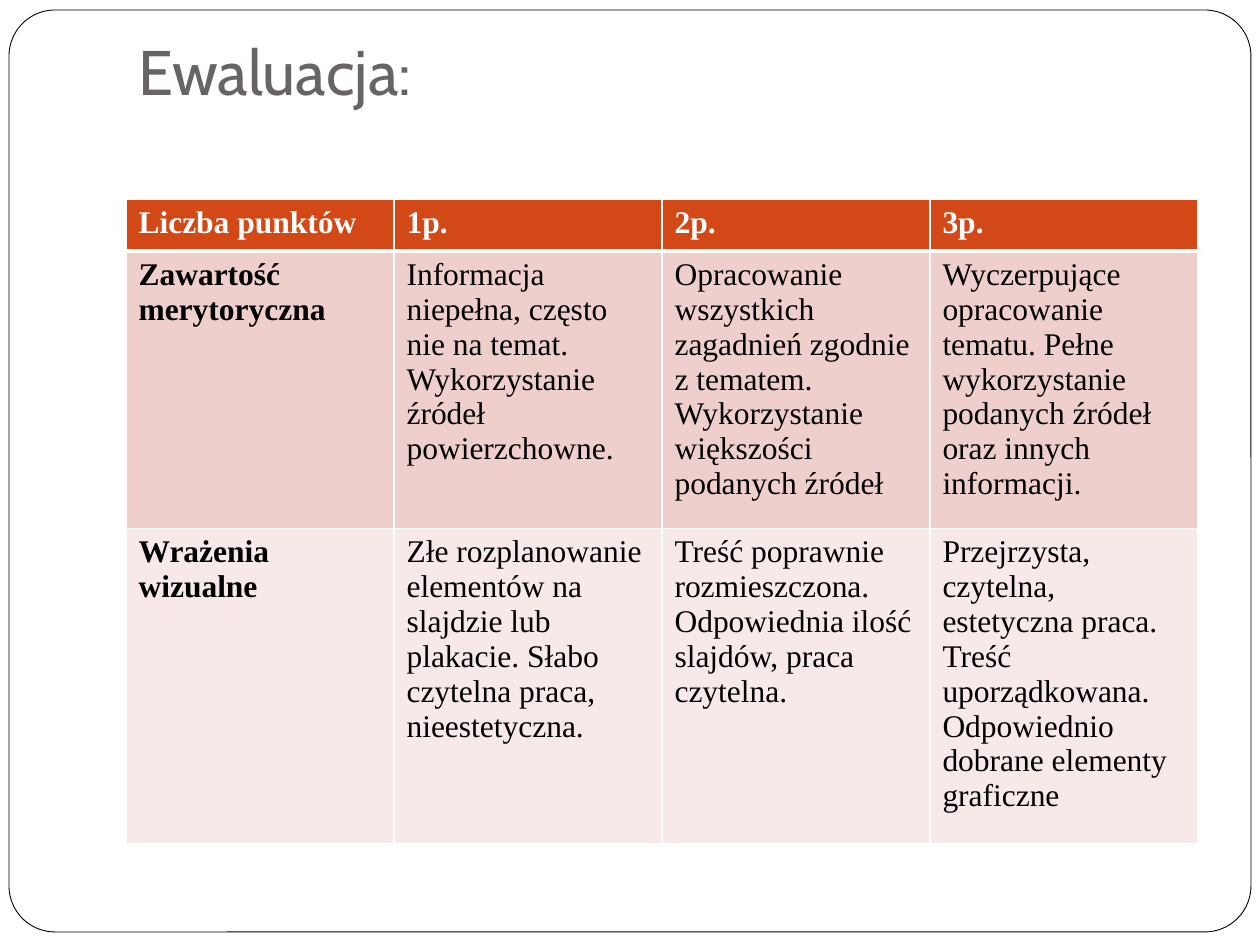
from typing import NamedTuple

from lxml.etree import SubElement
from pptx import Presentation
from pptx.dml.color import RGBColor
from pptx.enum.shapes import MSO_SHAPE
from pptx.oxml.ns import qn
from pptx.util import Emu, Pt

EMU_PER_PX = 914400 / 126
COLORS = {
    "white": "FFFFFF",
    "black": "000000",
    "title": "696464",
    "header": "D34817",
    "content": "EFCFCC",
    "visual": "F7E9E8",
}


class Box(NamedTuple):
    left: int
    top: int
    width: int
    height: int


class Criterion(NamedTuple):
    height: int
    fill: str
    ink: str
    texts: tuple[str, ...]


FRAME = Box(9, 10, 1242, 922)
TITLE = Box(126, 33, 1071, 162)
RUBRIC = Box(126, 199, 1072, 599)
CRITERIA = (
    Criterion(52, "header", "white", ("Liczba punktów", "1p.", "2p.", "3p.")),
    Criterion(256, "content", "black", (
        "Zawartość merytoryczna",
        "Informacja niepełna, często nie na temat. Wykorzystanie źródeł powierzchowne.",
        "Opracowanie wszystkich zagadnień zgodnie z tematem. "
        "Wykorzystanie większości podanych źródeł",
        "Wyczerpujące opracowanie tematu. Pełne wykorzystanie podanych źródeł "
        "oraz innych informacji.",
    )),
    Criterion(291, "visual", "black", (
        "Wrażenia wizualne",
        "Złe rozplanowanie elementów na slajdzie lub plakacie. "
        "Słabo czytelna praca, nieestetyczna.",
        "Treść poprawnie rozmieszczona. Odpowiednia ilość slajdów, praca czytelna.",
        "Przejrzysta, czytelna, estetyczna praca. Treść uporządkowana. "
        "Odpowiednio dobrane elementy graficzne",
    )),
)


def px(length: int) -> Emu:
    return Emu(round(length * EMU_PER_PX))


def place(box: Box) -> tuple[Emu, ...]:
    return tuple(px(length) for length in box)


def color(name: str) -> RGBColor:
    return RGBColor.from_string(COLORS[name])


def style(paragraph, face: str, size: int, ink: str, bold: bool = False) -> None:
    font = paragraph.font
    font.name, font.size, font.bold = face, Pt(size), bold
    font.color.rgb = color(ink)


def draw_borders(cell, bottom_width: int) -> None:
    properties = cell._tc.get_or_add_tcPr()
    widths = {"a:lnL": 1, "a:lnR": 1, "a:lnT": 1, "a:lnB": bottom_width}
    for position, (side, width) in enumerate(widths.items()):
        line = SubElement(properties, qn(side), w=str(Pt(width)))
        fill = SubElement(line, qn("a:solidFill"))
        SubElement(fill, qn("a:srgbClr"), val=COLORS["white"])
        # Borders come before the cell fill
        properties.insert(position, line)


def draw_frame(slide) -> None:
    frame = slide.shapes.add_shape(MSO_SHAPE.ROUNDED_RECTANGLE, *place(FRAME))
    frame.adjustments[0] = 0.05
    frame.shadow.inherit = False
    frame.fill.solid()
    frame.fill.fore_color.rgb = color("white")
    frame.line.color.rgb = color("black")
    frame.line.width = Pt(0.5)


def draw_title(slide, heading: str) -> None:
    text = slide.shapes.add_textbox(*place(TITLE)).text_frame
    text.word_wrap = True
    text.margin_top = 0
    text.text = heading
    style(text.paragraphs[0], "Cabin", 36, "title")


def draw_rubric(slide) -> None:
    columns = len(CRITERIA[0].texts)
    rubric = slide.shapes.add_table(len(CRITERIA), columns, *place(RUBRIC)).table
    for column in rubric.columns:
        column.width = px(RUBRIC.width // columns)
    for r, criterion in enumerate(CRITERIA):
        rubric.rows[r].height = px(criterion.height)
        for c, text in enumerate(criterion.texts):
            cell = rubric.cell(r, c)
            cell.text = text
            cell.fill.solid()
            cell.fill.fore_color.rgb = color(criterion.fill)
            style(cell.text_frame.paragraphs[0], "Times New Roman", 18,
                  criterion.ink, bold=r == 0 or c == 0)
            draw_borders(cell, bottom_width=3 if r == 0 else 1)


def main() -> None:
    deck = Presentation()
    deck.slide_width, deck.slide_height = px(1260), px(945)
    slide = deck.slides.add_slide(deck.slide_layouts[6])
    draw_frame(slide)
    draw_title(slide, "Ewaluacja:")
    draw_rubric(slide)
    deck.save("out.pptx")


if __name__ == "__main__":
    main()
